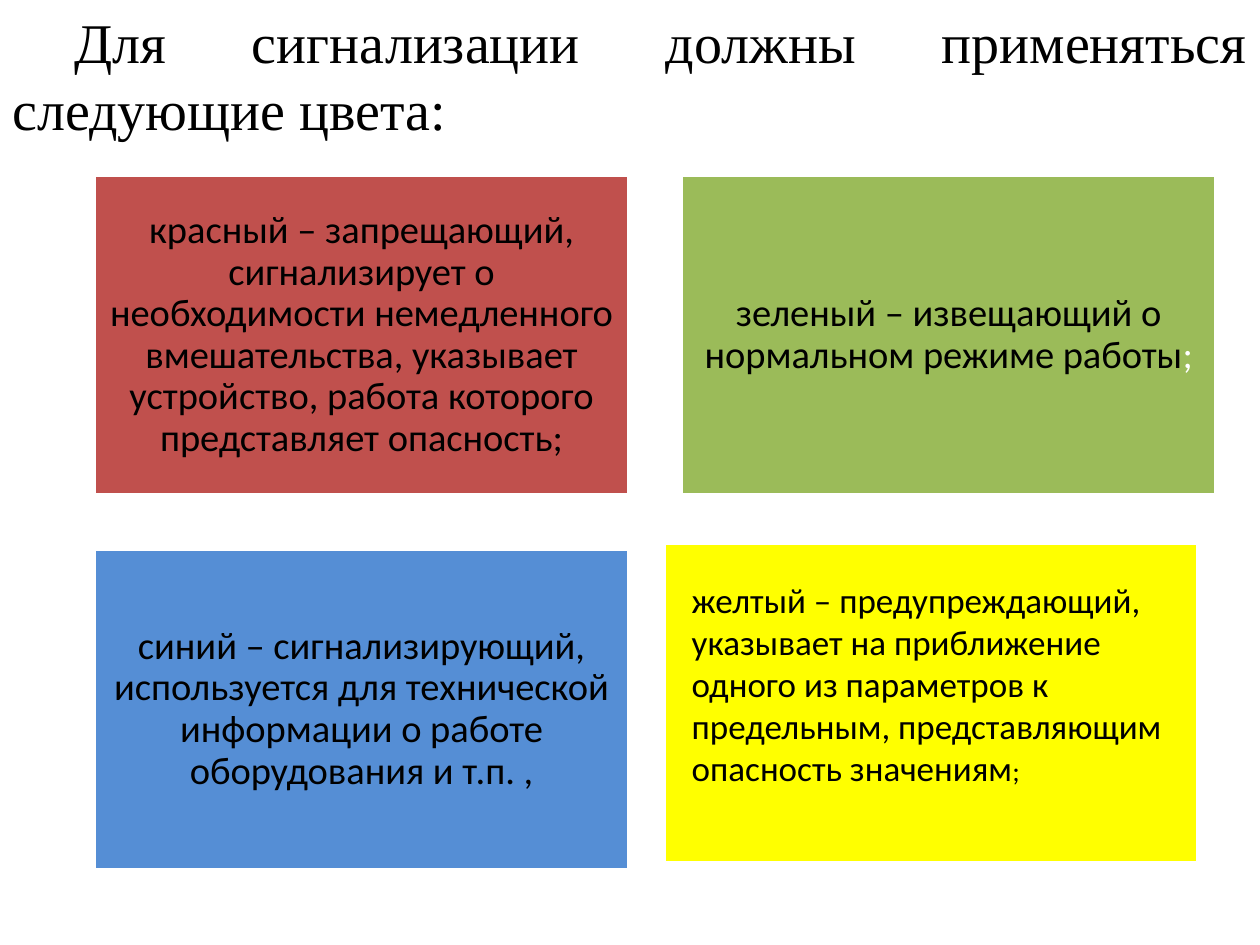
from dataclasses import dataclass

from pptx import Presentation
from pptx.dml.color import RGBColor
from pptx.enum.shapes import MSO_SHAPE
from pptx.enum.text import MSO_ANCHOR, PP_ALIGN
from pptx.util import Inches, Pt

RECTANGLE = MSO_SHAPE.RECTANGLE
TOP, MIDDLE = MSO_ANCHOR.TOP, MSO_ANCHOR.MIDDLE
LEFT, CENTER, JUSTIFY = PP_ALIGN.LEFT, PP_ALIGN.CENTER, PP_ALIGN.JUSTIFY

COLORS = {
    "black": "000000",
    "white": "FFFFFF",
    "red": "C0504D",
    "green": "9BBB59",
    "blue": "558ED5",
    "yellow": "FFFF00",
}
CARD_WIDTH, CARD_HEIGHT = 4.24, 2.54
GRID_LEFT, GRID_TOP = 0.75, 1.39
COLUMN_STEP, ROW_STEP = 4.66, 2.97


@dataclass
class Card:
    left: float
    top: float
    fill: str
    text: str
    ending: str = ""
    ending_color: str = "black"
    size: int = 22
    ending_size: int = 22
    alignment: PP_ALIGN = CENTER
    anchor: MSO_ANCHOR = MIDDLE
    line_spacing: float = 0.9
    margins: tuple[float, float, float, float] = (0.09, 0.09, 0.09, 0.09)


CARDS = [
    Card(GRID_LEFT, GRID_TOP, "red",
         "красный – запрещающий, сигнализирует о необходимости немедленного "
         "вмешательства, указывает устройство, работа которого представляет опасность;"),
    Card(GRID_LEFT + COLUMN_STEP, GRID_TOP, "green",
         "зеленый – извещающий о нормальном режиме работы", ";", "white"),
    Card(GRID_LEFT, GRID_TOP + ROW_STEP, "blue",
         "синий – сигнализирующий, используется для технической информации "
         "о работе оборудования и т.п. ,"),
    Card(5.27, 4.31, "yellow",
         "желтый – предупреждающий, указывает на приближение одного из параметров "
         "к предельным, представляющим опасность значениям", ";",
         size=20, ending_size=16, alignment=LEFT, anchor=TOP, line_spacing=1.0,
         margins=(0.22, 0.28, 0.2, 0.09)),
]


def color(name: str) -> RGBColor:
    return RGBColor.from_string(COLORS[name])


def format_run(run, font_name: str, size: int, color_name: str) -> None:
    run.font.name = font_name
    run.font.size = Pt(size)
    run.font.color.rgb = color(color_name)


def add_title(slide, text: str) -> None:
    title = slide.shapes.add_textbox(Inches(0), Inches(0), Inches(10), Inches(1.18))
    text_frame = title.text_frame
    text_frame.word_wrap = True
    text_frame.vertical_anchor = MIDDLE
    text_frame.text = text
    paragraph = text_frame.paragraphs[0]
    paragraph.alignment = JUSTIFY
    paragraph._p.get_or_add_pPr().set("indent", str(Inches(0.49)))
    format_run(paragraph.runs[0], "Times New Roman", 32, "black")


def add_card(slide, card: Card) -> None:
    shape = slide.shapes.add_shape(RECTANGLE, Inches(card.left), Inches(card.top),
                                   Inches(CARD_WIDTH), Inches(CARD_HEIGHT))
    shape.shadow.inherit = False
    shape.fill.solid()
    shape.fill.fore_color.rgb = color(card.fill)
    shape.line.color.rgb = color("white")
    shape.line.width = Pt(2)

    text_frame = shape.text_frame
    text_frame.word_wrap = True
    text_frame.vertical_anchor = card.anchor
    (text_frame.margin_left, text_frame.margin_top,
     text_frame.margin_right, text_frame.margin_bottom) = map(Inches, card.margins)
    text_frame.text = card.text
    paragraph = text_frame.paragraphs[0]
    paragraph.alignment = card.alignment
    paragraph.line_spacing = card.line_spacing
    format_run(paragraph.runs[0], "Calibri", card.size, "black")
    if card.ending:
        ending = paragraph.add_run()
        ending.text = card.ending
        format_run(ending, "Calibri", card.ending_size, card.ending_color)


def main() -> None:
    presentation = Presentation()
    presentation.slide_width = Inches(10)
    presentation.slide_height = Inches(7.5)
    slide = presentation.slides.add_slide(presentation.slide_layouts[6])
    add_title(slide, "Для сигнализации должны применяться следующие цвета:")
    for card in CARDS:
        add_card(slide, card)
    presentation.save("out.pptx")


if __name__ == "__main__":
    main()
